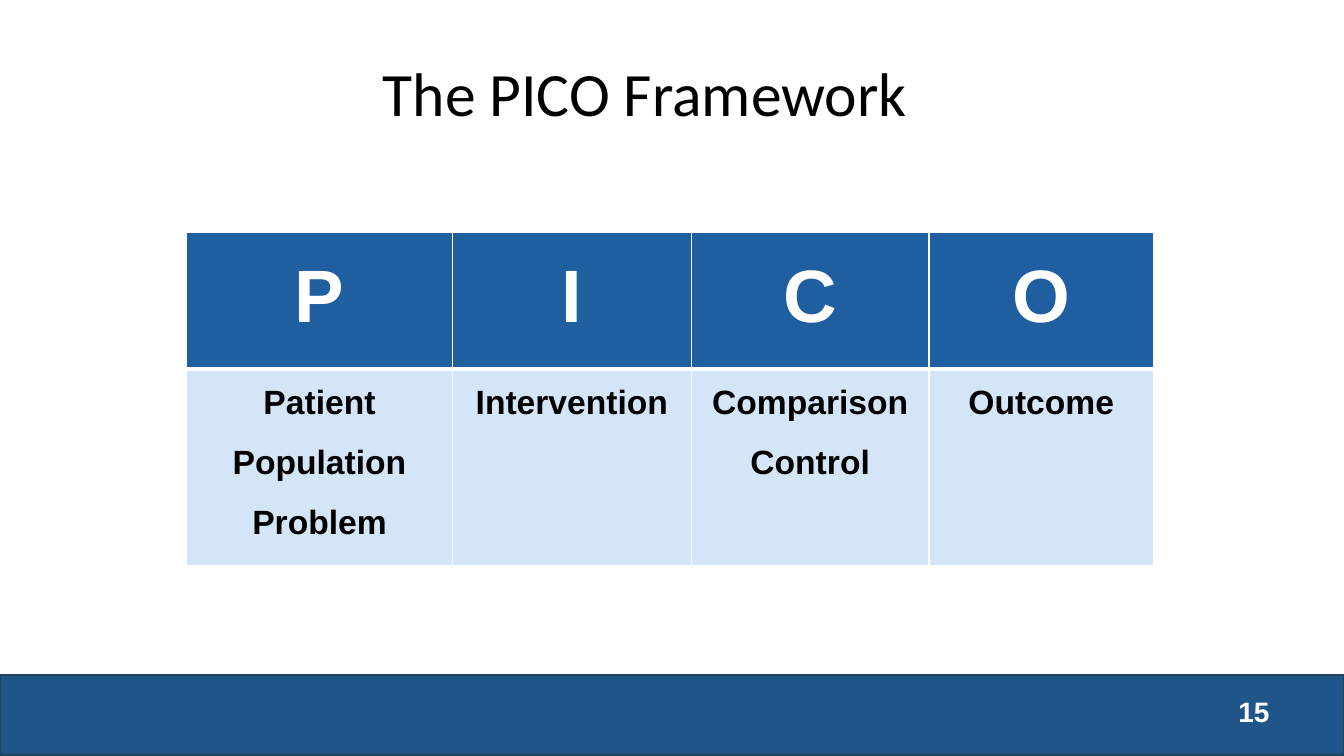
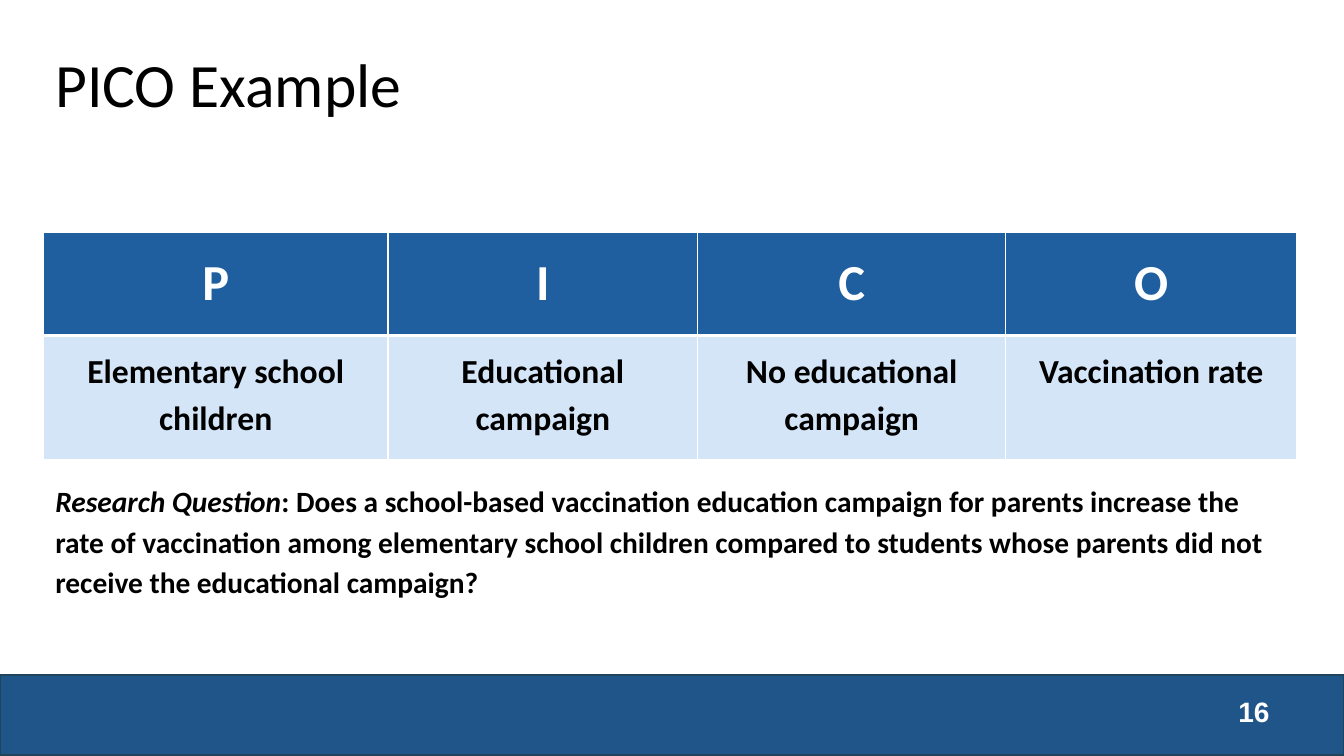
from lxml.etree import SubElement as Sub
from pptx import Presentation as Deck
from pptx.dml.color import RGBColor as Rgb
from pptx.enum.shapes import MSO_SHAPE as Shape
from pptx.enum.text import MSO_ANCHOR as Anchor, PP_ALIGN as Align
from pptx.oxml.ns import qn
from pptx.util import Inches, Pt

WIDE, HIGH = Inches(13.33), Inches(7.5)
BAND, EDGE = "20558A", "20455A"
HEAD, PALE = "1F5FA0", "D4E5F7"
WHITE, BLACK = "FFFFFF", "000000"
PAD = Inches(0.1)
SPLIT = (0.275, 0.247, 0.246, 0.232)


def across(part):
    """Turn a percentage of the slide's width into a length."""
    return round(WIDE * part / 100)


def down(part):
    """Turn a percentage of the slide's height into a length."""
    return round(HIGH * part / 100)


def place(x, y, w, h):
    """Turn four percentages into left, top, width and height."""
    return across(x), down(y), across(w), down(h)


def paint(fmt, tone):
    """Give a fill, or the fill of a line or font, one solid colour."""
    fmt.solid()
    fmt.fore_color.rgb = Rgb.from_string(tone)


def write(frame, *lines, size, font="Calibri", tone=BLACK, bold=False,
          align=Align.LEFT, lead=None, gap=0):
    """Write lines, each a string or a list of (text, italic) pairs."""
    frame.word_wrap = True
    for n, line in enumerate(lines):
        para = frame.add_paragraph() if n else frame.paragraphs[0]
        para.alignment, para.line_spacing = align, lead
        para.space_before = Pt(gap if n else 0)
        for text, slant in [(line, False)] if isinstance(line, str) else line:
            run = para.add_run()
            run.text = text
            face = run.font
            face.name, face.size = font, Pt(size)
            face.bold, face.italic = bold, slant
            paint(face.fill, tone)


def label(slide, spot, *lines, anchor=Anchor.TOP, pad=Inches(0.05), **style):
    """Add a text box at a spot given in percentages."""
    frame = slide.shapes.add_textbox(*place(*spot)).text_frame
    frame.vertical_anchor = anchor
    frame.margin_top = frame.margin_bottom = pad
    write(frame, *lines, **style)


def border(cell, **sides):
    """Draw white cell borders, with a width in points for each side."""
    props = cell._tc.get_or_add_tcPr()
    for side, width in sides.items():
        line = Sub(props, qn(f"a:ln{side}"), w=str(Pt(width)))
        Sub(Sub(line, qn("a:solidFill")), qn("a:srgbClr"), val=WHITE)


def chart(slide, spot, rows, terms, size, font):
    """Add the PICO table: a row of letters above a row of terms."""
    x, y, w = spot
    frame = slide.shapes.add_table(2, 4, *place(x, y, w, sum(rows)))
    table = frame.table
    table.horz_banding = False
    for col, share in zip(table.columns, SPLIT):
        col.width = across(w * share)
    looks = ((rows[0], [[c] for c in "PICO"], size, WHITE, HEAD, 1),
             (rows[1], terms, 24, BLACK, PALE, 3))
    for r, (tall, texts, points, tone, back, top) in enumerate(looks):
        table.rows[r].height = down(tall)
        for c, lines in enumerate(texts):
            cell = table.cell(r, c)
            cell.margin_left = cell.margin_right = PAD
            cell.margin_top = cell.margin_bottom = PAD
            border(cell, L=1, R=1, T=top, B=3)
            paint(cell.fill, back)
            write(cell.text_frame, *lines, size=points, font=font, tone=tone,
                  bold=True, align=Align.CENTER, lead=1.15, gap=12)


def start(deck, title, number, spot, align):
    """Add a slide with its band, title and number."""
    slide = deck.slides.add_slide(deck.slide_layouts[6])
    band = slide.shapes.add_shape(Shape.RECTANGLE,
                                  *place(0, 89.33, 100, 10.53))
    band.shadow.inherit = False
    paint(band.fill, BAND)
    paint(band.line.fill, EDGE)
    band.line.width = Pt(1.5)
    label(slide, (*spot, 81, 19.73), title, anchor=Anchor.MIDDLE,
          size=44, align=align, lead=0.9)
    label(slide, (81.17, 91.2, 14.03, 5.33), number, size=20, font="Arial",
          tone=WHITE, bold=True, align=Align.RIGHT)
    return slide


def main():
    """Build and save both slides."""
    deck = Deck()
    deck.slide_width, deck.slide_height = WIDE, HIGH

    slide = start(deck, "The PICO Framework", "15", (7.5, 2.93), Align.CENTER)
    chart(slide, (13.88, 30.8, 71.94), (18, 26.13),
          (["Patient", "Population", "Problem"], ["Intervention"],
           ["Comparison", "Control"], ["Outcome"]), 53, "Arial")

    slide = start(deck, "PICO Example", "16", (3.38, 1.73), Align.LEFT)
    chart(slide, (3.23, 30.8, 93.25), (13.6, 16.53),
          (["Elementary school children"], ["Educational campaign"],
           ["No educational campaign"], ["Vaccination rate"]), 36, "Calibri")
    label(slide, (3.38, 61.87, 93.25, 19.73),
          [("Research Question", True),
           (": Does a school-based vaccination education campaign for "
            "parents increase the rate of vaccination among elementary "
            "school children compared to students whose parents did not "
            "receive the educational campaign?", False)],
          pad=PAD, size=21, bold=True, lead=1.15)

    deck.save("out.pptx")


if __name__ == "__main__":
    main()
